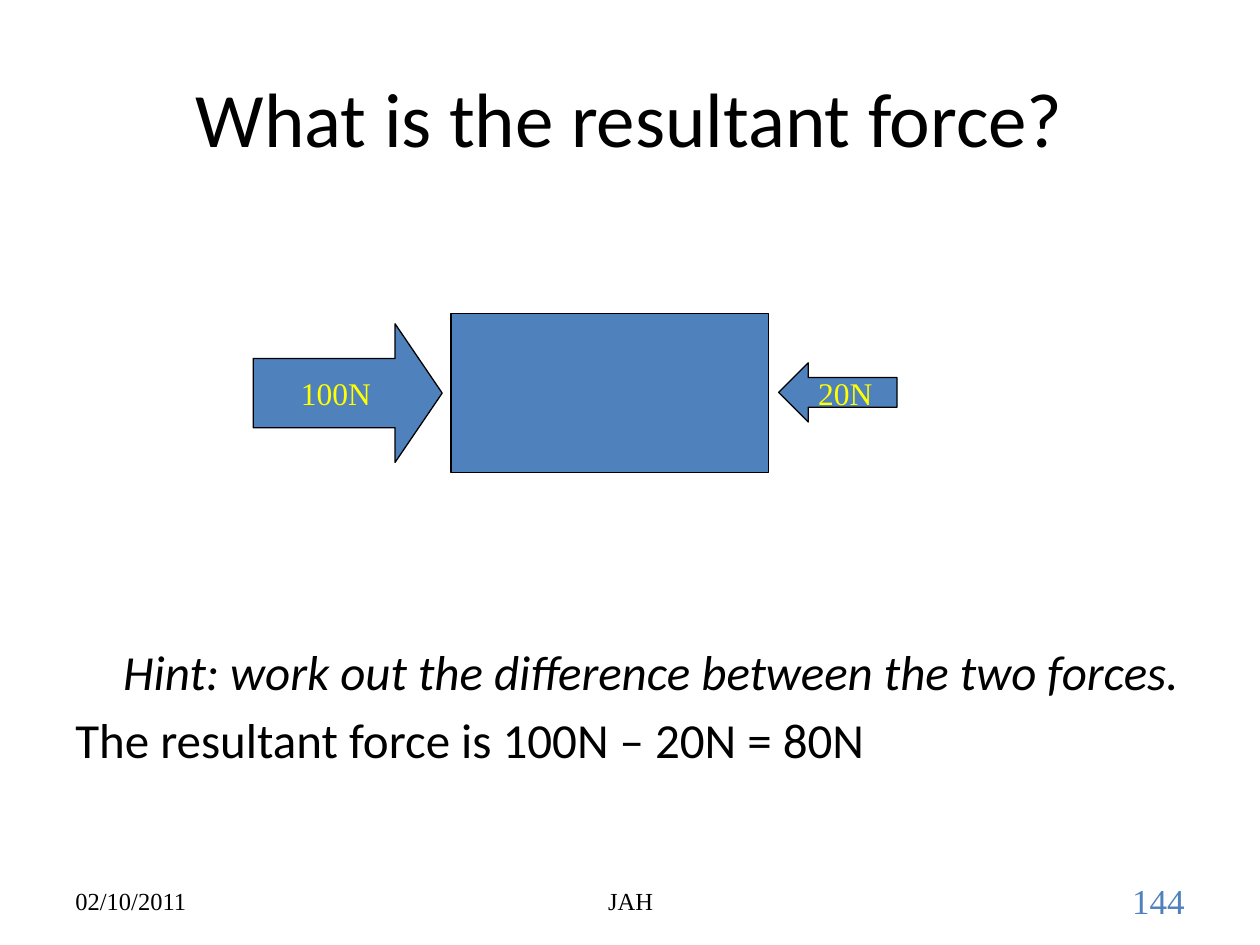
from pptx import Presentation
from pptx.dml.color import RGBColor
from pptx.enum.shapes import MSO_SHAPE
from pptx.enum.text import MSO_ANCHOR, PP_ALIGN
from pptx.util import Inches, Pt

LEFT, CENTER, RIGHT = PP_ALIGN.LEFT, PP_ALIGN.CENTER, PP_ALIGN.RIGHT
TOP, MIDDLE = MSO_ANCHOR.TOP, MSO_ANCHOR.MIDDLE
RECTANGLE = MSO_SHAPE.RECTANGLE
RIGHT_ARROW, LEFT_ARROW = MSO_SHAPE.RIGHT_ARROW, MSO_SHAPE.LEFT_ARROW

TITLE_ONLY = 5
SANS, SERIF = "Calibri", "Times New Roman"
BLACK, BLUE, YELLOW = "000000", "4F81BD", "FFFF00"
TITLE_BOX = (0.5, 0.3, 9, 1.25)
ANSWER_BOX = (0.5, 5.04, 9, 1.66)
FOOTER_TOP, FOOTER_HEIGHT = 6.95, 0.4
HINT_INDENT = 0.38


def rgb(hex_colour):
    return RGBColor.from_string(hex_colour)


def inches(box):
    return [Inches(length) for length in box]


def style(paragraph, size, font, colour, align):
    paragraph.alignment = align
    paragraph.font.size = Pt(size)
    paragraph.font.name = font
    paragraph.font.color.rgb = rgb(colour)


def set_title(slide, text):
    title = slide.shapes.title
    title.left, title.top, title.width, title.height = inches(TITLE_BOX)
    title.text_frame.text = text
    title.text_frame.vertical_anchor = MIDDLE
    style(title.text_frame.paragraphs[0], 44, SANS, BLACK, CENTER)


def add_text(slide, box, lines, size, font, colour=BLACK, align=LEFT, anchor=TOP):
    """Add a wrapping text box and return its paragraphs, one for each line."""
    frame = slide.shapes.add_textbox(*inches(box)).text_frame
    frame.word_wrap = True
    frame.vertical_anchor = anchor
    frame.text = "\n".join(lines)
    for paragraph in frame.paragraphs:
        style(paragraph, size, font, colour, align)
    return frame.paragraphs


def add_block(slide, preset, box):
    block = slide.shapes.add_shape(preset, *inches(box))
    block.shadow.inherit = False
    block.fill.solid()
    block.fill.fore_color.rgb = rgb(BLUE)
    block.line.color.rgb = rgb(BLACK)
    block.line.width = Pt(0.75)
    return block


def add_force(slide, preset, box, head_length, label):
    arrow = add_block(slide, preset, box)
    arrow.adjustments[0] = 0.5
    arrow.adjustments[1] = head_length
    frame = arrow.text_frame
    frame.word_wrap = False
    frame.vertical_anchor = MIDDLE
    frame.text = label
    style(frame.paragraphs[0], 18, SERIF, YELLOW, CENTER)


def add_answer(slide):
    hint, result = add_text(
        slide, ANSWER_BOX,
        ["Hint: work out the difference between the two forces.",
         "The resultant force is 100N – 20N = 80N"],
        28, SANS)
    hint.font.italic = True
    hint._p.get_or_add_pPr().set("marL", str(Inches(HINT_INDENT)))
    result.space_before = Pt(5.6)


def add_footer(slide):
    for left, width, text, size, colour, align in (
            (0.5, 2.33, "02/10/2011", 14, BLACK, LEFT),
            (3.42, 3.17, "JAH", 14, BLACK, CENTER),
            (7.17, 2.33, "144", 20, BLUE, RIGHT)):
        add_text(slide, (left, FOOTER_TOP, width, FOOTER_HEIGHT), [text],
                 size, SERIF, colour, align, MIDDLE)


def main():
    deck = Presentation()
    deck.slide_width, deck.slide_height = Inches(10), Inches(7.5)
    slide = deck.slides.add_slide(deck.slide_layouts[TITLE_ONLY])
    set_title(slide, "What is the resultant force?")
    add_block(slide, RECTANGLE, (3.58, 2.49, 2.52, 1.26))
    add_force(slide, RIGHT_ARROW, (2.01, 2.57, 1.5, 1.1), 0.34, "100N")
    add_force(slide, LEFT_ARROW, (6.18, 2.88, 0.94, 0.47), 0.5, "20N")
    add_answer(slide)
    add_footer(slide)
    deck.save("out.pptx")


if __name__ == "__main__":
    main()
